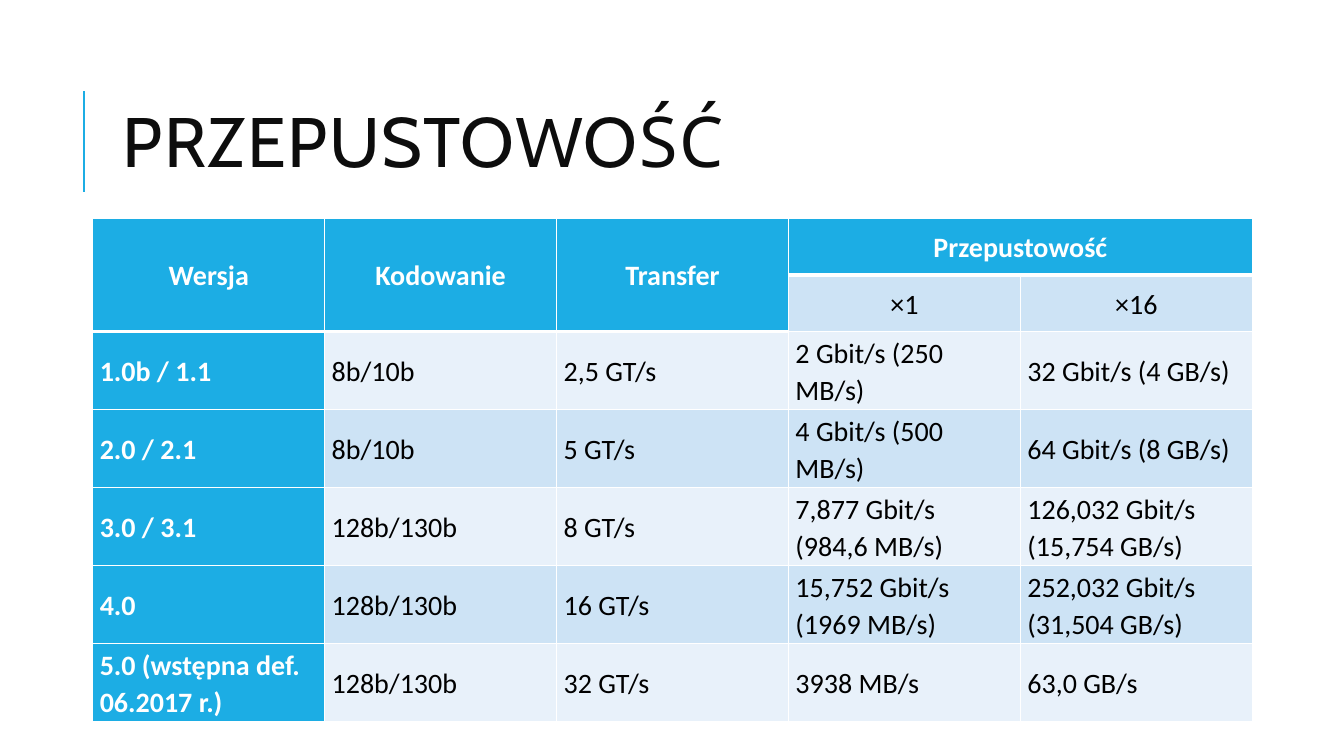
import dataclasses

import pptx
import pptx.dml.color
import pptx.enum.shapes
import pptx.enum.text
import pptx.oxml
import pptx.oxml.ns
import pptx.util

Inches, Pt = pptx.util.Inches, pptx.util.Pt
ANCHOR, ALIGN = pptx.enum.text.MSO_ANCHOR, pptx.enum.text.PP_ALIGN
LINK = pptx.enum.shapes.MSO_CONNECTOR.STRAIGHT


@dataclasses.dataclass(frozen=True)
class Theme:
    accent: str = "1CADE4"
    bands: tuple = ("E8F1FA", "CDE3F5")
    white: str = "FFFFFF"
    black: str = "000000"
    ink: str = "0D0D0D"
    head_font: str = "Cabin"
    body_font: str = "Calibri"
    head_size: int = 50
    body_size: int = 20
    thin: int = 1
    thick: int = 3


TITLE = "PRZEPUSTOWOŚĆ"
ROWS = [
    ["Wersja", "Kodowanie", "Transfer", "Przepustowość", ""],
    ["", "", "", "×1", "×16"],
    ["1.0b / 1.1", "8b/10b", "2,5 GT/s", "2 Gbit/s (250 MB/s)", "32 Gbit/s (4 GB/s)"],
    ["2.0 / 2.1", "8b/10b", "5 GT/s", "4 Gbit/s (500 MB/s)", "64 Gbit/s (8 GB/s)"],
    ["3.0 / 3.1", "128b/130b", "8 GT/s", "7,877 Gbit/s (984,6 MB/s)",
     "126,032 Gbit/s (15,754 GB/s)"],
    ["4.0", "128b/130b", "16 GT/s", "15,752 Gbit/s (1969 MB/s)",
     "252,032 Gbit/s (31,504 GB/s)"],
    ["5.0 (wstępna def. 06.2017 r.)", "128b/130b", "32 GT/s", "3938 MB/s", "63,0 GB/s"],
]
MERGES = [((0, 0), (1, 0)), ((0, 1), (1, 1)), ((0, 2), (1, 2)), ((0, 3), (0, 4))]


def color(code):
    return pptx.dml.color.RGBColor.from_string(code)


def is_head(row, col):
    """Tell whether a cell belongs to the accent header, merged parts included."""
    return row == 0 or (row == 1 and col < 3)


class Deck:
    def __init__(self, theme, slide):
        self.theme, self.slide = theme, slide

    def style(self, para, font, size, ink, bold=False):
        for run in para.runs:
            run.font.name, run.font.size = font, Pt(size)
            run.font.bold, run.font.color.rgb = bold, color(ink)

    def title(self, text, left, top, width, height):
        frame = self.slide.shapes.add_textbox(
            Inches(left), Inches(top), Inches(width), Inches(height)).text_frame
        frame.word_wrap, frame.vertical_anchor = True, ANCHOR.MIDDLE
        frame.text = text
        para = frame.paragraphs[0]
        para.line_spacing = 0.8
        self.style(para, self.theme.head_font, self.theme.head_size, self.theme.ink)
        para.runs[0].font._element.set("spc", "100")

    def line(self, x1, y1, x2, y2, width):
        link = self.slide.shapes.add_connector(
            LINK, Inches(x1), Inches(y1), Inches(x2), Inches(y2))
        link.line.color.rgb, link.line.width = color(self.theme.accent), Pt(width)
        link._element.spPr.append(pptx.oxml.parse_xml(
            f'<a:effectLst {pptx.oxml.ns.nsdecls("a")}/>'))

    def border(self, cell, side, width):
        cell._tc.get_or_add_tcPr().append(pptx.oxml.parse_xml(
            f'<a:ln{side} {pptx.oxml.ns.nsdecls("a")} w="{Pt(width)}"><a:solidFill>'
            f'<a:srgbClr val="{self.theme.white}"/></a:solidFill></a:ln{side}>'))

    def cell(self, cell, text, row, col):
        theme = self.theme
        head = is_head(row, col)
        strong = head or col == 0
        below = row > 0 and is_head(row - 1, col)
        for side, heavy in (("L", False), ("R", False), ("T", below), ("B", head)):
            self.border(cell, side, theme.thick if heavy else theme.thin)
        cell.fill.solid()
        cell.fill.fore_color.rgb = color(theme.accent if strong else theme.bands[row % 2])
        cell.vertical_anchor = ANCHOR.MIDDLE
        cell.margin_left = cell.margin_right = Inches(0.07)
        cell.margin_top = cell.margin_bottom = Inches(0.03)
        cell.text_frame.text = text
        para = cell.text_frame.paragraphs[0]
        para.alignment = ALIGN.CENTER if row < 2 else ALIGN.LEFT
        para.line_spacing = 1.07
        para.space_before = para.space_after = Pt(12)
        self.style(para, theme.body_font, theme.body_size,
                   theme.white if strong else theme.black, strong)

    def table(self, rows, merges, left, top, width, height):
        """Add a table; width and height are those of one cell."""
        count, span = len(rows), len(rows[0])
        table = self.slide.shapes.add_table(
            count, span, Inches(left), Inches(top),
            Inches(width * span), Inches(height * count)).table
        table.first_row = table.horz_banding = False
        for first, last in merges:
            table.cell(*first).merge(table.cell(*last))
        for row, texts in enumerate(rows):
            for col, text in enumerate(texts):
                self.cell(table.cell(row, col), text, row, col)


def main():
    show = pptx.Presentation()
    show.slide_width, show.slide_height = Inches(13.33), Inches(7.5)
    deck = Deck(Theme(), show.slides.add_slide(show.slide_layouts[6]))
    deck.line(0.83, 1.9, 0.83, 0.9, 1.5)
    deck.title(TITLE, 1.12, 0.64, 10.63, 1.64)
    deck.table(ROWS, MERGES, 0.92, 2.17, 2.3, 0.56)
    show.save("out.pptx")


if __name__ == "__main__":
    main()
